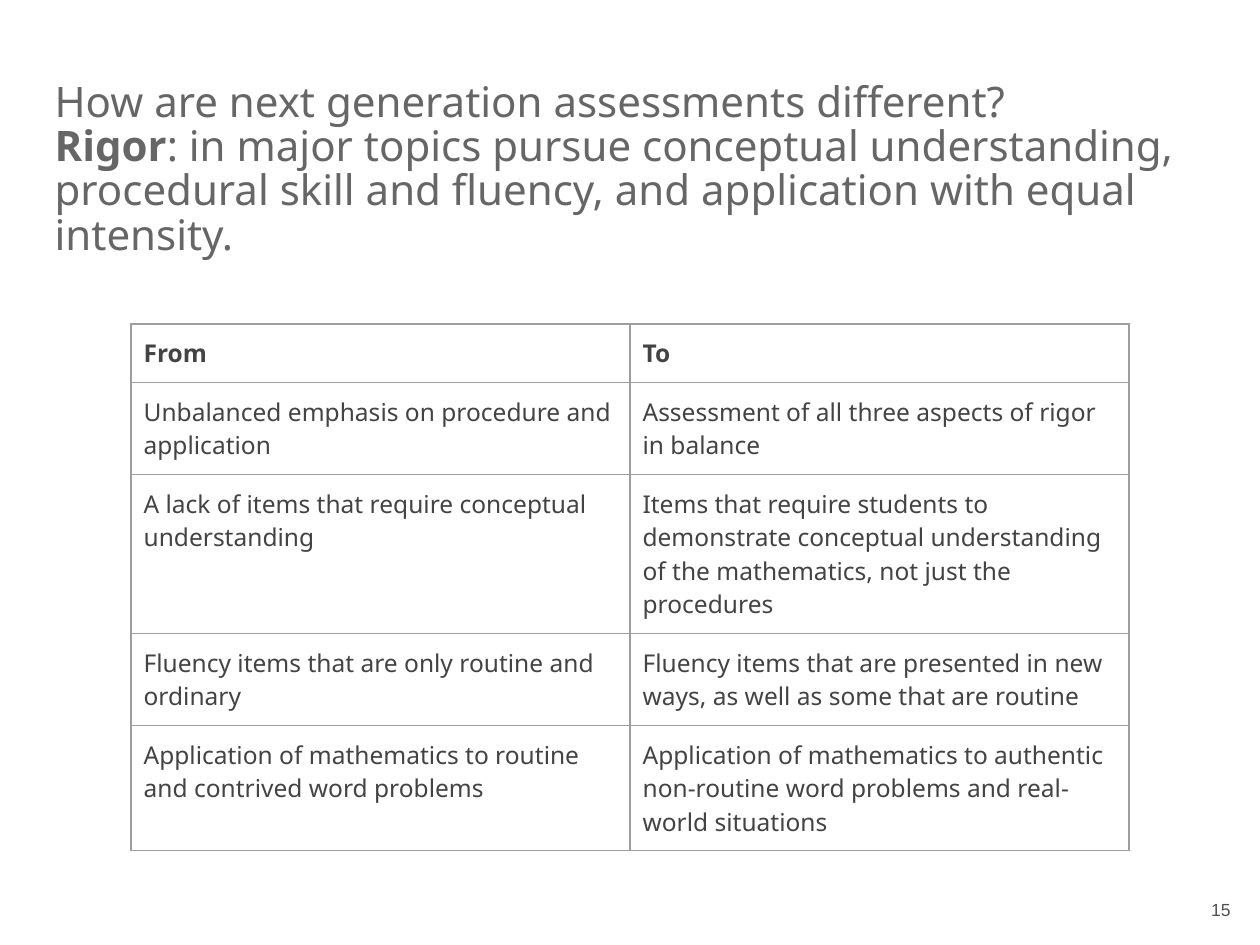
from lxml import etree
from pptx import Presentation, util as u
from pptx.dml.color import RGBColor
from pptx.enum import text
from pptx.oxml.ns import qn

TITLE = [
    [("How are next generation assessments different?", False)],
    [("Rigor", True),
     (": in major topics pursue conceptual understanding, procedural skill "
      "and fluency, and application with equal intensity.", False)],
]
SHIFTS = [
    ("From", "To"),
    ("Unbalanced emphasis on procedure and application",
     "Assessment of all three aspects of rigor in balance"),
    ("A lack of items that require conceptual understanding",
     "Items that require students to demonstrate conceptual understanding "
     "of the mathematics, not just the procedures"),
    ("Fluency items that are only routine and ordinary",
     "Fluency items that are presented in new ways, as well as some that are routine"),
    ("Application of mathematics to routine and contrived word problems",
     "Application of mathematics to authentic non-routine word problems "
     "and real-world situations"),
]
PAGE_NUMBER = "15"

HEADING_GRAY = RGBColor(0x66, 0x66, 0x66)
BODY_GRAY = RGBColor(0x43, 0x43, 0x43)
NUMBER_GRAY = RGBColor(0x50, 0x51, 0x4F)
BORDER_GRAY = RGBColor(0x9E, 0x9E, 0x9E)
FONT = "Noto Sans"

PX = u.Inches(1) / 126
INSET = u.Inches(0.1)
MARGINS = {f"margin_{side}": INSET for side in ("left", "right", "top", "bottom")}
COLUMN_WIDTH, ROW_HEIGHT = 499, 53


def px(*lengths):
    return [u.Emu(round(length * PX)) for length in lengths]


def apply(target, values):
    for name, value in values.items():
        setattr(target, name, value)


def write(paragraph, wording, size, color, bold=False, name=FONT):
    run = paragraph.add_run()
    run.text = wording
    apply(run.font, {"size": u.Pt(size), "bold": bold, "name": name})
    run.font.color.rgb = color


def outline(cell):
    properties = cell._tc.get_or_add_tcPr()
    for position, side in enumerate(("lnL", "lnR", "lnT", "lnB")):
        line = etree.Element(qn(f"a:{side}"), w=str(u.Pt(0.75)))
        fill = etree.SubElement(line, qn("a:solidFill"))
        etree.SubElement(fill, qn("a:srgbClr"), val=str(BORDER_GRAY))
        properties.insert(position, line)


def add_title(slide):
    title = slide.shapes.title
    apply(title, dict(zip(("left", "top", "width", "height"), px(42, 38, 1182, 265))))
    frame = title.text_frame
    apply(frame, {**MARGINS, "word_wrap": True,
                  "auto_size": text.MSO_AUTO_SIZE.NONE,
                  "vertical_anchor": text.MSO_ANCHOR.MIDDLE})
    for index, runs in enumerate(TITLE):
        paragraph = frame.add_paragraph() if index else frame.paragraphs[0]
        apply(paragraph, {"alignment": text.PP_ALIGN.LEFT, "line_spacing": 0.88})
        for wording, bold in runs:
            write(paragraph, wording, 24, HEADING_GRAY, bold)


def add_shifts(slide):
    rows, columns = len(SHIFTS), len(SHIFTS[0])
    area = px(131, 324, columns * COLUMN_WIDTH, rows * ROW_HEIGHT)
    table = slide.shapes.add_table(rows, columns, *area).table
    apply(table, {"first_row": False, "horz_banding": False})
    for r, shift in enumerate(SHIFTS):
        for c, wording in enumerate(shift):
            cell = table.cell(r, c)
            apply(cell, MARGINS)
            cell.fill.background()
            outline(cell)
            write(cell.text_frame.paragraphs[0], wording, 14, BODY_GRAY, r == 0)


def add_page_number(slide):
    frame = slide.shapes.add_textbox(*px(1043, 893, 200, 34)).text_frame
    frame.word_wrap = True
    frame.paragraphs[0].alignment = text.PP_ALIGN.RIGHT
    write(frame.paragraphs[0], PAGE_NUMBER, 10, NUMBER_GRAY, name="Arial")


def main():
    deck = Presentation()
    deck.slide_width, deck.slide_height = px(1260, 945)
    slide = deck.slides.add_slide(deck.slide_layouts.get_by_name("Title Only"))
    add_title(slide)
    add_shifts(slide)
    add_page_number(slide)
    deck.save("out.pptx")


if __name__ == "__main__":
    main()
